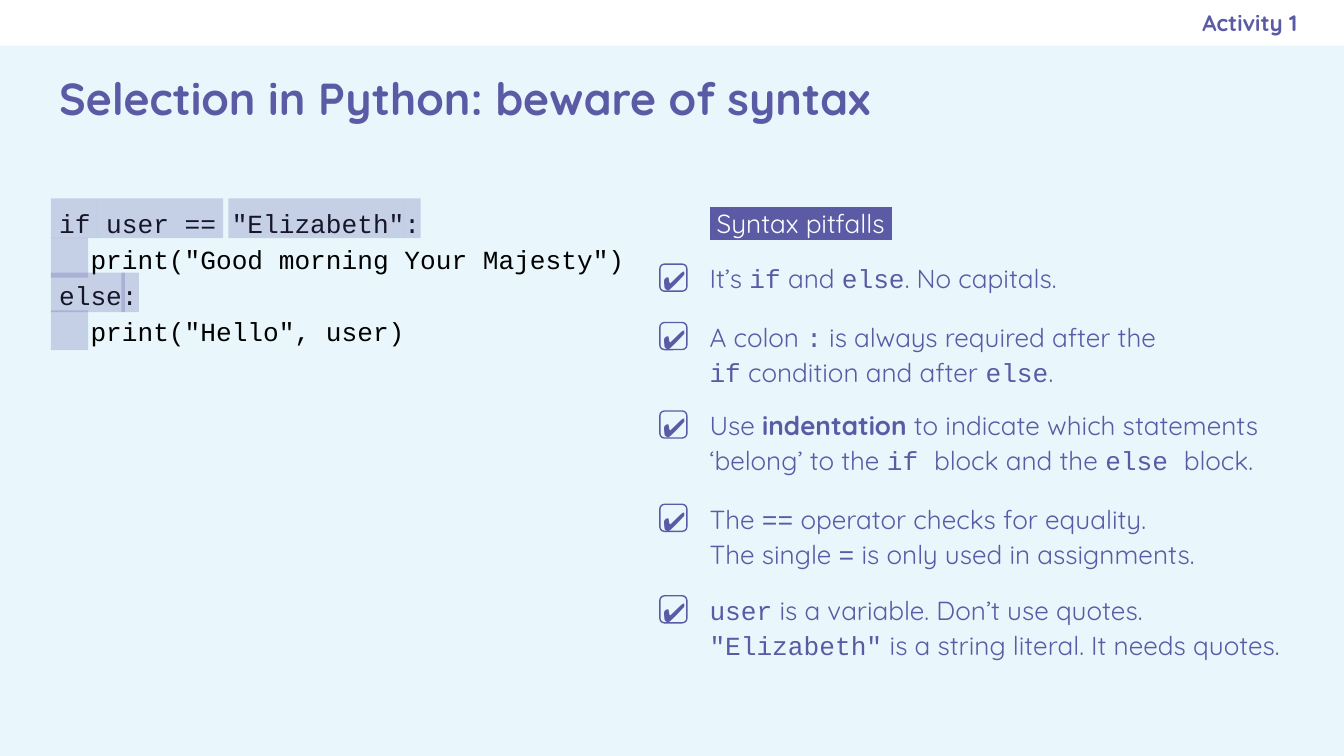
"""Build a slide on the syntax pitfalls of selection in Python."""
from dataclasses import dataclass

import pptx
import pptx.dml.color
import pptx.enum.shapes
import pptx.enum.text
import pptx.oxml.ns
import pptx.oxml.xmlchemy
import pptx.util
from lxml import etree
from pptx.util import Pt

PURPLE = pptx.dml.color.RGBColor(0x5B, 0x5B, 0xA5)
PALE_BLUE = pptx.dml.color.RGBColor(0xE9, 0xF7, 0xFC)
WHITE = pptx.dml.color.RGBColor(0xFF, 0xFF, 0xFF)
BLACK = pptx.dml.color.RGBColor(0x00, 0x00, 0x00)
PROSE_FONT, CODE_FONT = "Quicksand", "Courier New"
TEXT_SIZE = 14
PITFALL_LEFT, PITFALL_WIDTH = 373, 322
CHECK_LEFT, CHECK_SIZE = 353.5, 14.5
LEFT = pptx.enum.text.PP_ALIGN.LEFT
RIGHT = pptx.enum.text.PP_ALIGN.RIGHT
CENTER = pptx.enum.text.PP_ALIGN.CENTER
TOP = pptx.enum.text.MSO_ANCHOR.TOP
MIDDLE = pptx.enum.text.MSO_ANCHOR.MIDDLE
RECTANGLE = pptx.enum.shapes.MSO_SHAPE.RECTANGLE
ROUNDED = pptx.enum.shapes.MSO_SHAPE.ROUNDED_RECTANGLE


@dataclass(frozen=True)
class Phrase:
    text: str
    font: str = PROSE_FONT
    bold: bool = False


@dataclass(frozen=True)
class Pitfall:
    top: float
    height: float
    lines: list[list[Phrase]]


@dataclass(frozen=True)
class Highlight:
    left: float
    top: float
    width: float


def code(text: str) -> Phrase:
    return Phrase(text, CODE_FONT)


CODE_LINES = [
    'if user == "Elizabeth":',
    '  print("Good morning Your Majesty")',
    "else:",
    '  print("Hello", user)',
]
IF_TOP, GREETING_TOP, ELSE_TOP, HELLO_TOP = 106.3, 127.5, 146, 166.3
HIGHLIGHT_HEIGHT = 21.3
HIGHLIGHTS = [
    Highlight(27.3, IF_TOP, 25.2),
    Highlight(27.3, ELSE_TOP, 39.6),
    Highlight(94.3, IF_TOP, 25.2),
    Highlight(216, IF_TOP, 9.4),
    Highlight(65, ELSE_TOP, 9.4),
    Highlight(27.3, GREETING_TOP, 20),
    Highlight(27.3, HELLO_TOP, 20),
    Highlight(52.5, IF_TOP, 41.8),
    Highlight(122.4, IF_TOP, 93.6),
]
PITFALLS = [
    Pitfall(131.5, 31.7, [
        [Phrase("It’s "), code("if"), Phrase(" and "), code("else"), Phrase(". No capitals.")],
    ]),
    Pitfall(162.8, 46, [
        [Phrase("A colon "), code(":"), Phrase(" is always required after the")],
        [code("if"), Phrase(" condition and after "), code("else"), Phrase(".")],
    ]),
    Pitfall(210.2, 46, [
        [Phrase("Use "), Phrase("indentation", bold=True),
         Phrase(" to indicate which statements ‘belong’ to the "), code("if "),
         Phrase("block and the "), code("else "), Phrase("block.")],
    ]),
    Pitfall(260.2, 46, [
        [Phrase("The "), code("=="), Phrase(" operator checks for equality.")],
        [Phrase("The single "), code("="), Phrase(" is only used in assignments.")],
    ]),
    Pitfall(309.2, 51, [
        [code("user"), Phrase(" is a variable. Don’t use quotes.")],
        [code('"Elizabeth"'), Phrase(" is a string literal. It needs quotes.")],
    ]),
]


def place(shape, left: float, top: float, width: float, height: float) -> None:
    shape.left, shape.top = Pt(left), Pt(top)
    shape.width, shape.height = Pt(width), Pt(height)


def write(shape, lines: list[list[Phrase]], color, size: float = TEXT_SIZE, align=LEFT,
          anchor=TOP, spacing: float = 1.0, right_inset: float = 7.2, inset: float = 7.2) -> None:
    frame = shape.text_frame
    frame.word_wrap = True
    frame.auto_size = pptx.enum.text.MSO_AUTO_SIZE.NONE
    frame.vertical_anchor = anchor
    frame.margin_left = frame.margin_top = frame.margin_bottom = Pt(inset)
    frame.margin_right = Pt(right_inset)
    for number, line in enumerate(lines):
        paragraph = frame.add_paragraph() if number else frame.paragraphs[0]
        paragraph.alignment = align
        paragraph.line_spacing = spacing
        paragraph.space_before = paragraph.space_after = Pt(0)
        if shape.is_placeholder:
            properties = paragraph.alignment is not None and paragraph.font and paragraph._p.get_or_add_pPr()
            properties.set("marL", "0")
            properties.set("indent", "0")
            etree.SubElement(properties, pptx.oxml.ns.qn("a:buNone"))
        for phrase in line:
            run = paragraph.add_run()
            run.text = phrase.text
            run.font.size = Pt(size)
            run.font.bold = phrase.bold
            run.font.color.rgb = color
            run.font.name = phrase.font


def add_text(slide, left: float, top: float, width: float, height: float, lines, color, **style):
    box = slide.shapes.add_textbox(Pt(left), Pt(top), Pt(width), Pt(height))
    write(box, lines, color, **style)
    return box


def add_block(slide, left: float, top: float, width: float, height: float, color):
    block = slide.shapes.add_shape(RECTANGLE, Pt(left), Pt(top), Pt(width), Pt(height))
    block.shadow.inherit = False
    block.fill.solid()
    block.fill.fore_color.rgb = color
    block.line.fill.background()
    return block


def add_highlight(slide, mark: Highlight) -> None:
    block = add_block(slide, mark.left, mark.top, mark.width, HIGHLIGHT_HEIGHT, PURPLE)
    fill_color = block.element.spPr.find(".//" + pptx.oxml.ns.qn("a:srgbClr"))
    etree.SubElement(fill_color, pptx.oxml.ns.qn("a:alpha"), val="25000")


def add_pitfall(slide, pitfall: Pitfall) -> None:
    add_text(slide, PITFALL_LEFT, pitfall.top, PITFALL_WIDTH, pitfall.height, pitfall.lines,
             PURPLE, spacing=1.12, right_inset=4.3)
    check_top = pitfall.top + 10
    add_text(slide, CHECK_LEFT + 0.5, check_top - 2, CHECK_SIZE, CHECK_SIZE, [[Phrase("✔")]],
             PURPLE, align=CENTER, spacing=1.14, right_inset=0, inset=0)
    frame = slide.shapes.add_shape(ROUNDED, Pt(CHECK_LEFT), Pt(check_top), Pt(CHECK_SIZE), Pt(CHECK_SIZE))
    frame.shadow.inherit = False
    frame.adjustments[0] = 0.17
    frame.fill.background()
    frame.line.color.rgb = PURPLE
    frame.line.width = Pt(0.75)


def add_heading(slide) -> None:
    heading = add_text(slide, PITFALL_LEFT, 101.5, PITFALL_WIDTH, 31.7,
                       [[Phrase(" Syntax pitfalls ")]], WHITE, spacing=1.13, right_inset=4.3)
    solid_fill = heading.element.find(".//" + pptx.oxml.ns.qn("a:rPr")).find(pptx.oxml.ns.qn("a:solidFill"))
    backdrop = etree.Element(pptx.oxml.ns.qn("a:highlight"))
    etree.SubElement(backdrop, pptx.oxml.ns.qn("a:srgbClr"), val=str(PURPLE))
    solid_fill.addnext(backdrop)


def main() -> None:
    deck = pptx.Presentation()
    deck.slide_width, deck.slide_height = Pt(720), Pt(405)
    slide = deck.slides.add_slide(deck.slide_layouts[3])
    slide.background.fill.solid()
    slide.background.fill.fore_color.rgb = PALE_BLUE
    band = add_block(slide, 0, 0, 720, 24.5, WHITE)
    slide.shapes.element.insert(2, band.element)

    title, activity, program = slide.placeholders
    place(title, 24.5, 24.5, 671, 55.5)
    write(title, [[Phrase("Selection in Python: beware of syntax", bold=True)]], PURPLE,
          size=24, anchor=MIDDLE)
    place(activity, 414, 0, 281, 24.5)
    write(activity, [[Phrase("Activity 1", bold=True)]], PURPLE, size=12, align=RIGHT,
          anchor=MIDDLE, right_inset=0)
    place(program, 24.5, 101.5, 348.5, 90)
    write(program, [[code(line)] for line in CODE_LINES], BLACK, spacing=1.15)

    add_heading(slide)
    for mark in HIGHLIGHTS:
        add_highlight(slide, mark)
    for pitfall in PITFALLS:
        add_pitfall(slide, pitfall)
    deck.save("out.pptx")


if __name__ == "__main__":
    main()
